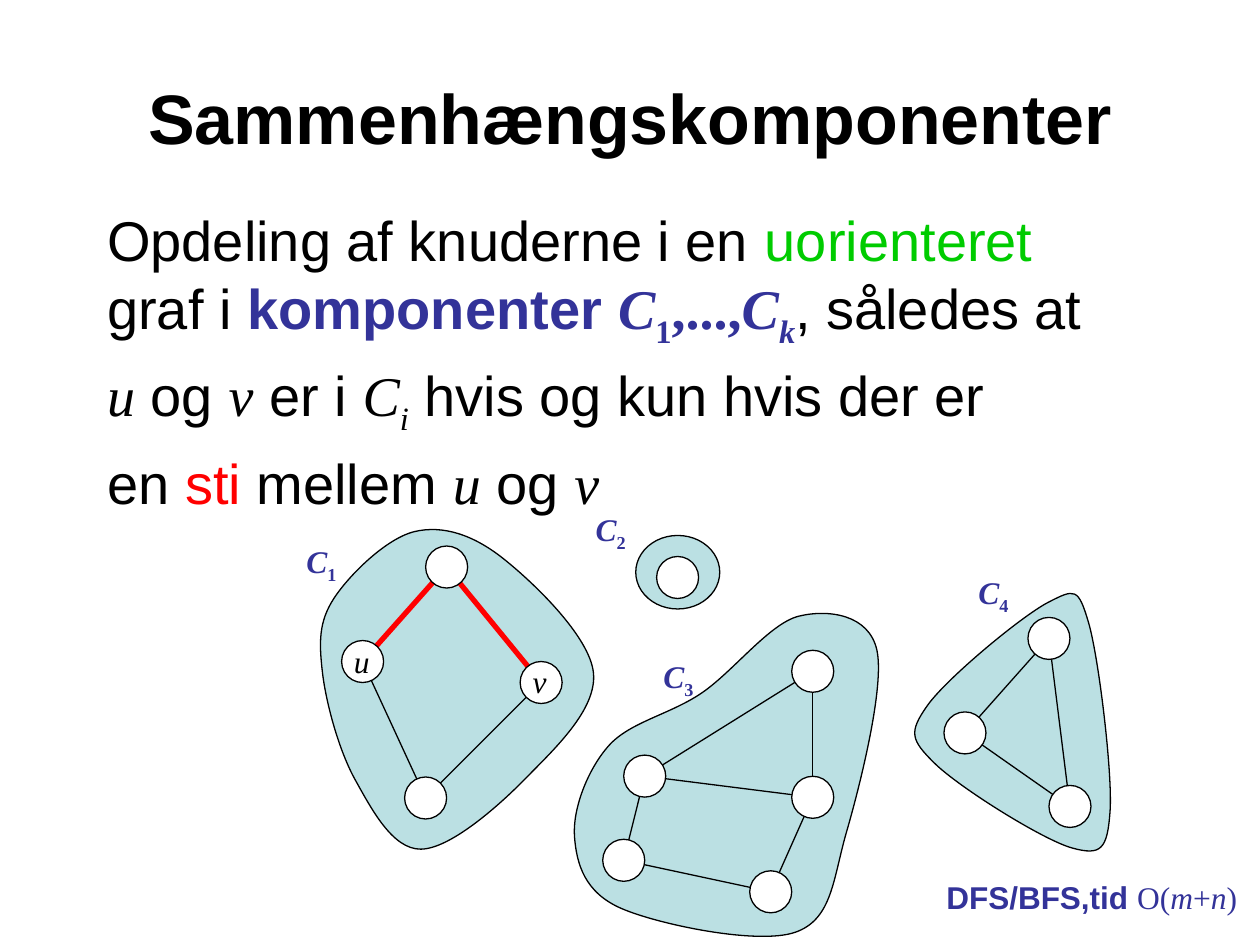
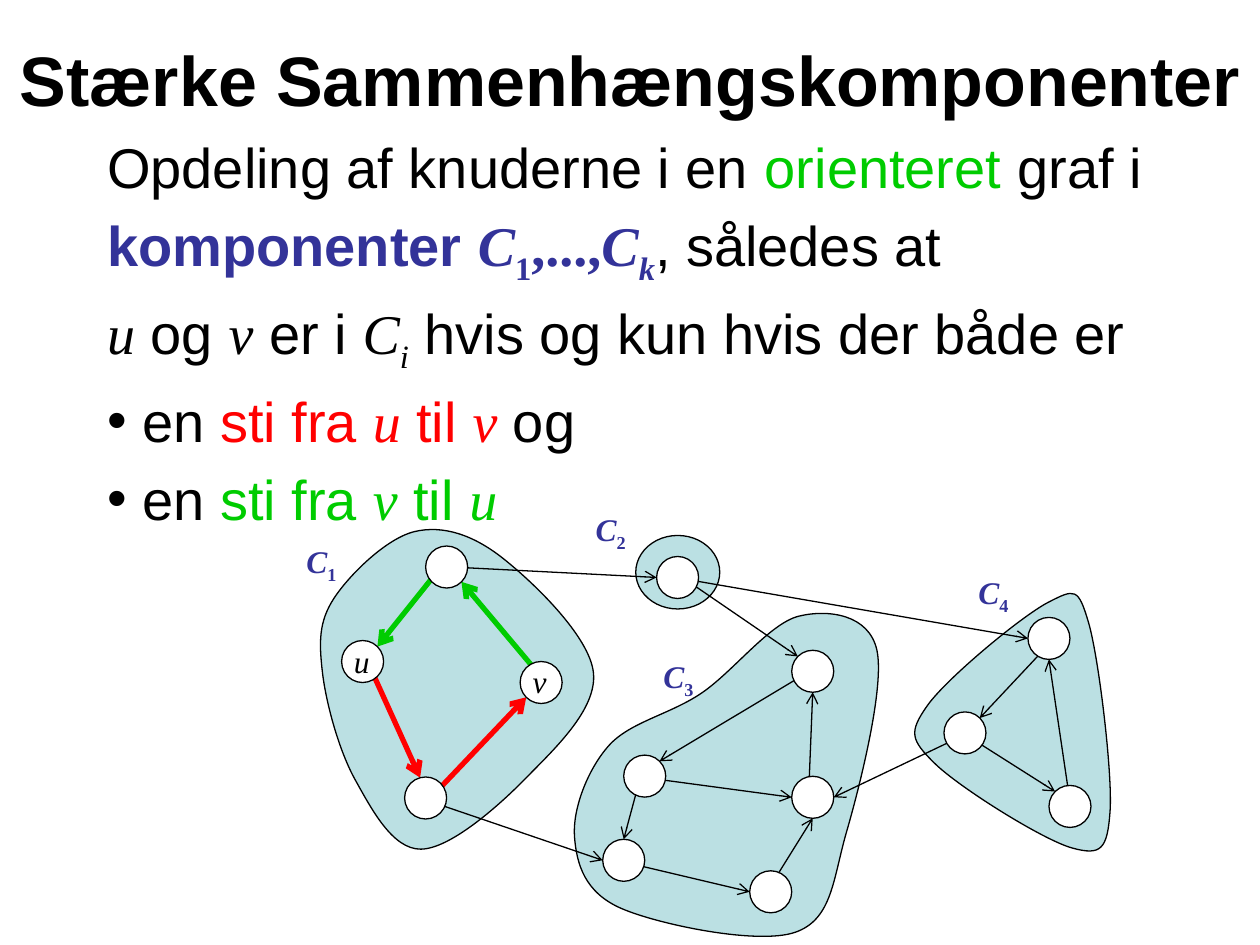
"""Builds two slides on connected and strongly connected components of a graph."""
from dataclasses import dataclass
from math import cos, radians, sin

from lxml import etree
from pptx import Presentation
from pptx.dml.color import RGBColor
from pptx.enum import shapes, text
from pptx.oxml import ns
from pptx.util import Pt


@dataclass(frozen=True)
class Theme:
    black: str = "000000"
    white: str = "FFFFFF"
    blue: str = "333399"
    green: str = "00CC00"
    red: str = "FF0000"
    region: str = "BBE0E3"
    sans: str = "Arial"
    serif: str = "Times New Roman"
    title: int = 40
    body: int = 32
    label: int = 18
    thin: float = 0.75
    thick: float = 3


theme = Theme()


def write(paragraph, words, *, size=theme.body, font=theme.sans, color=theme.black,
          bold=False, italic=False, sub=False):
    run = paragraph.add_run()
    run.text = words
    run.font.size, run.font.name = Pt(size), font
    run.font.bold, run.font.italic = bold, italic
    run.font.color.rgb = RGBColor.from_string(color)
    if sub:
        run._r.get_or_add_rPr().set("baseline", "-25000")


def draw_edge(slide, start, end, color, arrow):
    edge = slide.shapes.add_connector(shapes.MSO_CONNECTOR.STRAIGHT,
                                      *[Pt(value) for value in (*start, *end)])
    edge.line.color.rgb = RGBColor.from_string(color)
    edge.line.width = Pt(theme.thin if color == theme.black else theme.thick)
    if arrow:
        etree.SubElement(edge.line._get_or_add_ln(), ns.qn("a:tailEnd"), type="arrow")
    etree.SubElement(edge._element.spPr, ns.qn("a:effectLst"))


plain = {}
symbol = dict(font=theme.serif, italic=True)
symbol_sub = dict(symbol, sub=True)
term = dict(color=theme.blue, bold=True)
term_digit = dict(term, font=theme.serif)
term_symbol = dict(term_digit, italic=True)
red, green = dict(color=theme.red), dict(color=theme.green)

components = [("komponenter ", term), ("C", term_symbol), ("1", dict(term_digit, sub=True)),
              (",...,", term_digit), ("C", term_symbol), ("k", dict(term_symbol, sub=True)),
              (", således at", plain)]
members = [("u", symbol), (" og ", plain), ("v", symbol), (" er i ", plain),
           ("C", symbol), ("i", symbol_sub)]

regions = [
    [(599, 344.2), (622, 355.7), (634.3, 463.7), (612.7, 484.6), (534.2, 436.3), (529.9, 403.2)],
    [(401, 396), (456.5, 352.1), (501.1, 371.5), (483.8, 475.2), (454.3, 532.8),
     (355, 519.1), (328.3, 478.1), (347.8, 426.2)],
    [(184.3, 384.5), (190.8, 342), (236.9, 303.8), (287.3, 319), (339.1, 384.5),
     (300.2, 445), (240.5, 485.3), (203, 445.7)],
]
small_region = (363.3, 306, 48, 42)

radius = 12
nodes = {
    "u": (207.2, 378), "v": (309.2, 390), "top1": (255.2, 324), "low1": (243.2, 456),
    "only2": (387.2, 330),
    "top3": (464.4, 383.6), "left3": (368.4, 443.5), "right3": (464.4, 455.6),
    "lowleft3": (356.4, 491.6), "low3": (440.4, 509.6),
    "top4": (599.4, 364.8), "left4": (551.4, 418.8), "low4": (611.4, 460.8),
}
component_labels = {"1": (168, 306), "2": (333.2, 288), "3": (372, 372), "4": (552, 324)}
node_labels = {"u": (195.2, 363.6, 24), "v": (297.2, 374.8, 22.3)}

undirected = [
    ("top1", "v", theme.red), ("u", "low1", theme.black), ("low1", "v", theme.black),
    ("u", "top1", theme.red),
    ("left3", "lowleft3", theme.black), ("lowleft3", "low3", theme.black),
    ("low3", "right3", theme.black), ("right3", "top3", theme.black),
    ("top3", "left3", theme.black), ("right3", "left3", theme.black),
    ("low4", "left4", theme.black), ("low4", "top4", theme.black),
    ("left4", "top4", theme.black),
]
directed = [
    ((390, 330), "top3", 135, theme.black), ((551, 420), "right3", 0, theme.black),
    ((386, 330), "top4", 180, theme.black), ((552, 420), "low4", 135, theme.black),
    ((612, 462), "top4", 270, theme.black), ((600.5, 367), "left4", 45, theme.black),
    ((258, 324), "only2", 180, theme.black), ((366, 444), "right3", 180, theme.black),
    ((462, 456), "top3", 270, theme.black), ((438, 510), "right3", 270, theme.black),
    ((354, 492), "low3", 180, theme.black), ((366, 444), "lowleft3", 90, theme.black),
    ((462, 384), "left3", 45, theme.black), ((240, 456), "lowleft3", 180, theme.black),
    ((210, 378), "low1", 105, theme.red), ((246, 456), "v", 225, theme.red),
    ((312, 390), "top1", 315, theme.green), ((252, 324), "u", 45, theme.green),
]

undirected_edges = [(nodes[a], nodes[b], color) for a, b, color in undirected]
directed_edges = [
    (start, (nodes[target][0] + radius * cos(radians(angle)),
             nodes[target][1] - radius * sin(radians(angle))), color)
    for start, target, angle, color in directed]

topics = [
    dict(title="Sammenhængskomponenter", title_top=21.6, body_top=114, arrows=False,
         edges=undirected_edges, bullets_from=3, lines=[
             [("Opdeling af knuderne i en ", plain), ("uorienteret", green),
              (" graf i ", plain), *components],
             [*members, (" hvis og kun hvis der er", plain)],
             [("en ", plain), ("sti", red), (" mellem ", plain), ("u", symbol),
              (" og ", plain), ("v", symbol)]]),
    dict(title="Stærke Sammenhængskomponenter", title_top=0, body_top=72, arrows=True,
         edges=directed_edges, bullets_from=3, lines=[
             [("Opdeling af knuderne i en ", plain), ("orienteret", green), (" graf i", plain)],
             components,
             [*members, (" hvis og kun hvis der både er", plain)],
             [(" en ", plain), ("sti fra ", red), ("u", symbol | red), (" til ", red),
              ("v", symbol | red), (" og", plain)],
             [(" en ", plain), ("sti fra ", green), ("v", symbol | green), (" til ", green),
              ("u", symbol | green)]]),
]

deck = Presentation()
deck.slide_width, deck.slide_height = Pt(720), Pt(540)

for topic in topics:
    slide = deck.slides.add_slide(deck.slide_layouts[1])
    heading, body = slide.placeholders
    heading.left, heading.top = Pt(0), Pt(topic["title_top"])
    heading.width, heading.height = Pt(720), Pt(90)
    body.left, body.top = Pt(54), Pt(topic["body_top"])
    body.width, body.height = Pt(606), Pt(246)
    for part in (heading, body):
        part.text_frame.word_wrap = True
        part.text_frame.auto_size = text.MSO_AUTO_SIZE.NONE
    write(heading.text_frame.paragraphs[0], topic["title"], size=theme.title, bold=True)

    for number, line in enumerate(topic["lines"]):
        paragraph = body.text_frame.add_paragraph() if number else body.text_frame.paragraphs[0]
        properties = paragraph._p.get_or_add_pPr()
        properties.set("marL", "0")
        properties.set("indent", "0")
        if number < topic["bullets_from"]:
            etree.SubElement(properties, ns.qn("a:buNone"))
        else:
            etree.SubElement(properties, ns.qn("a:buChar"), char="•")
        for words, style in line:
            write(paragraph, words, **style)

    filled = []
    for points in regions:
        outline = []
        for i in range(len(points)):
            before, start, end, after = [points[(i + k) % len(points)] for k in (-1, 0, 1, 2)]
            leave = [q + (r - p) / 6 for p, q, r in zip(before, start, end)]
            arrive = [r - (s - q) / 6 for q, r, s in zip(start, end, after)]
            outline += [[Pt(value) for value in point] for point in (leave, arrive, end)]
        builder = slide.shapes.build_freeform(*outline[-1], scale=1.0)
        builder.add_line_segments(outline, close=True)
        region = builder.convert_to_shape()
        segments = list(region._element.iter(ns.qn("a:lnTo")))
        for first in range(0, len(segments), 3):
            curve = etree.Element(ns.qn("a:cubicBezTo"))
            segments[first].addprevious(curve)
            for segment in segments[first:first + 3]:
                curve.append(segment[0])
                segment.getparent().remove(segment)
        filled.append((region, theme.region))
    oval = shapes.MSO_SHAPE.OVAL
    filled.append((slide.shapes.add_shape(oval, *[Pt(v) for v in small_region]), theme.region))

    for start, end, color in topic["edges"]:
        draw_edge(slide, start, end, color, topic["arrows"])

    for x, y in nodes.values():
        circle = slide.shapes.add_shape(oval, Pt(x - radius), Pt(y - radius),
                                        Pt(2 * radius), Pt(2 * radius))
        filled.append((circle, theme.white))
    for area, color in filled:
        area.shadow.inherit = False
        area.fill.solid()
        area.fill.fore_color.rgb = RGBColor.from_string(color)
        area.line.color.rgb = RGBColor.from_string(theme.black)
        area.line.width = Pt(theme.thin)

    captions = [((x, y, 32.4), [("C", term_symbol), (digit, dict(term_digit, sub=True))])
                for digit, (x, y) in component_labels.items()]
    captions += [(place, [(name, symbol)]) for name, place in node_labels.items()]
    for (x, y, width), runs in captions:
        caption = slide.shapes.add_textbox(Pt(x), Pt(y), Pt(width), Pt(28.8)).text_frame
        caption.word_wrap = False
        caption.auto_size = text.MSO_AUTO_SIZE.SHAPE_TO_FIT_TEXT
        for words, style in runs:
            write(caption.paragraphs[0], words, size=theme.label, **style)

running_time = deck.slides[0].shapes.add_textbox(Pt(522), Pt(498), Pt(192), Pt(28.8)).text_frame
running_time.word_wrap = True
running_time.auto_size = text.MSO_AUTO_SIZE.SHAPE_TO_FIT_TEXT
running_time.paragraphs[0].alignment = text.PP_ALIGN.RIGHT
formula = dict(font=theme.serif, color=theme.blue)
for words, style in [("DFS/BFS,tid ", term), ("O(", formula), ("m", formula | symbol),
                     ("+", formula), ("n", formula | symbol), (")", formula)]:
    write(running_time.paragraphs[0], words, size=theme.label, **style)

deck.save("out.pptx")
